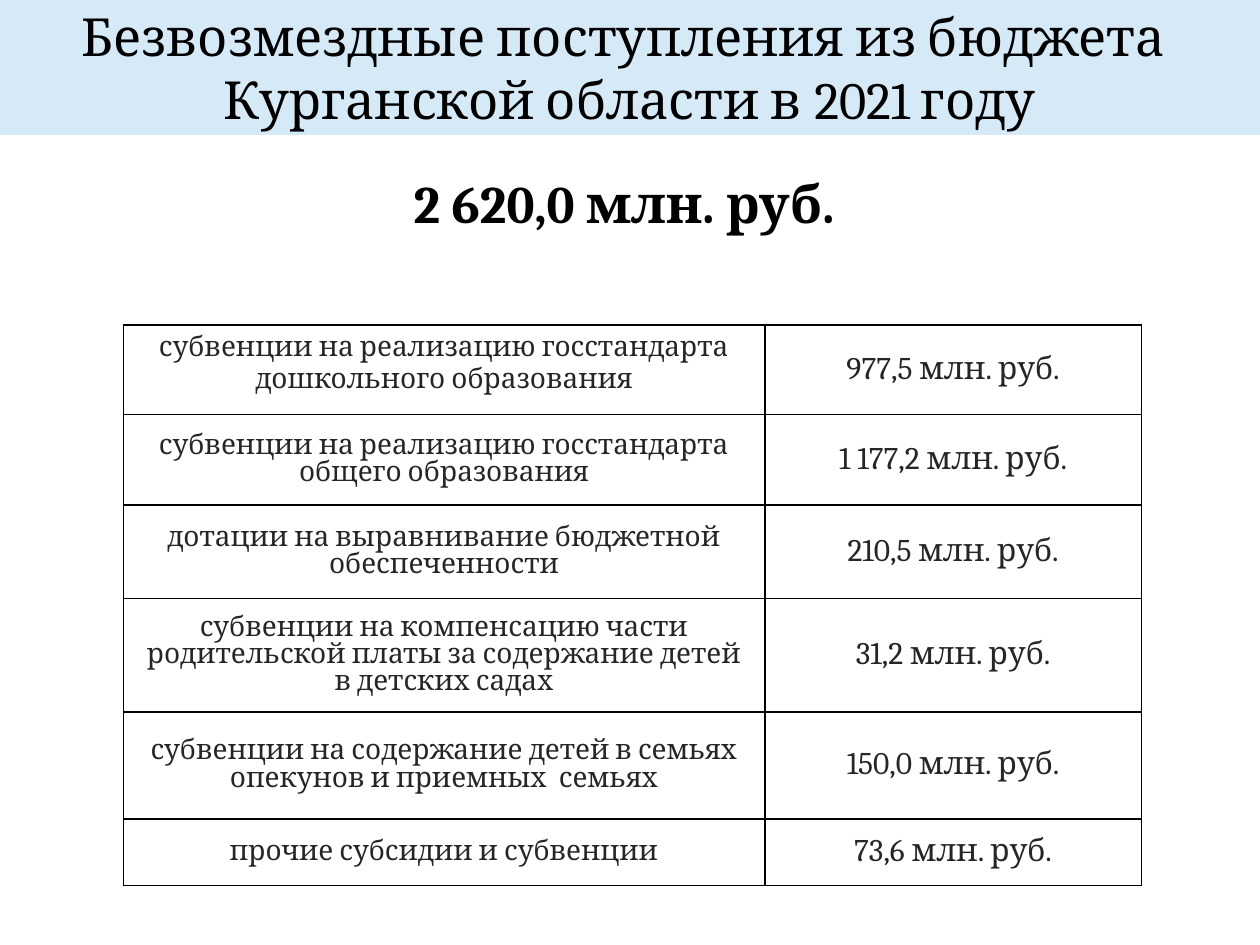
import pptx
import pptx.dml.color
import pptx.enum.text
import pptx.oxml
import pptx.oxml.ns
import pptx.util
from dataclasses import dataclass

Inches = pptx.util.Inches
ALIGN = pptx.enum.text.PP_ALIGN
ANCHOR = pptx.enum.text.MSO_ANCHOR


@dataclass(frozen=True)
class Theme:
    font: str = "Cambria"
    banner: str = "75B6E5"
    banner_alpha: int = 29
    black: str = "000000"
    body: str = "262626"
    heading_size: int = 30
    label_size: int = 16
    amount_size: int = 18
    border_width: int = 1


theme = Theme()


def format_text(text_frame, size, color, bold=False, spacing=1.0):
    for paragraph in text_frame.paragraphs:
        paragraph.alignment = ALIGN.CENTER
        paragraph.line_spacing = spacing
        paragraph.space_before = pptx.util.Pt(0)
        for run in paragraph.runs:
            run.font.name = theme.font
            run.font.size = pptx.util.Pt(size)
            run.font.bold = bold
            run.font.color.rgb = pptx.dml.color.RGBColor.from_string(color)


def add_borders(cell):
    properties = cell._tc.get_or_add_tcPr()
    for position, side in enumerate(("lnL", "lnR", "lnT", "lnB")):
        border = pptx.oxml.parse_xml(
            f'<a:{side} {pptx.oxml.ns.nsdecls("a")} w="{pptx.util.Pt(theme.border_width)}">'
            f'<a:solidFill><a:srgbClr val="{theme.black}"/></a:solidFill></a:{side}>'
        )
        properties.insert(position, border)


presentation = pptx.Presentation()
presentation.slide_width = Inches(10)
presentation.slide_height = Inches(7.5)
slide = presentation.slides.add_slide(presentation.slide_layouts[5])

# Title banner with a translucent fill
title = slide.shapes.title
title.left, title.top = Inches(0), Inches(0)
title.width, title.height = Inches(10), Inches(1.07)
title.fill.solid()
title.fill.fore_color.rgb = pptx.dml.color.RGBColor.from_string(theme.banner)
banner_color = title._element.spPr.find(".//" + pptx.oxml.ns.qn("a:srgbClr"))
banner_color.append(pptx.oxml.parse_xml(
    f'<a:alpha {pptx.oxml.ns.nsdecls("a")} val="{theme.banner_alpha * 1000}"/>'
))
title.text_frame.text = (
    "Безвозмездные поступления из бюджета \nКурганской области в 2021 году"
)
title.text_frame.vertical_anchor = ANCHOR.MIDDLE
title.text_frame.auto_size = pptx.enum.text.MSO_AUTO_SIZE.NONE
format_text(title.text_frame, theme.heading_size, theme.black)

# Table of receipts: label, amount, row height
receipts = [
    ("субвенции на реализацию госстандарта дошкольного образования", "977,5", 0.71),
    ("субвенции на реализацию госстандарта общего образования", "1 177,2", 0.72),
    ("дотации на выравнивание бюджетной обеспеченности", "210,5", 0.74),
    ("субвенции на компенсацию части родительской платы за содержание детей "
     "в детских садах", "31,2", 0.9),
    ("субвенции на содержание детей в семьях опекунов и приемных  семьях", "150,0", 0.85),
    ("прочие субсидии и субвенции", "73,6", 0.53),
]
table = slide.shapes.add_table(
    len(receipts), 2, Inches(0.98), Inches(2.58), Inches(8.08), Inches(4.45)
).table
table.first_row = False
table.horz_banding = False
table.columns[0].width = Inches(5.09)
table.columns[1].width = Inches(2.99)

for row, (label, amount, height) in enumerate(receipts):
    table.rows[row].height = Inches(height)
    contents = [(label, theme.label_size), (f"{amount} млн. руб.", theme.amount_size)]
    for column, (text, size) in enumerate(contents):
        cell = table.cell(row, column)
        cell.fill.background()
        add_borders(cell)
        cell.text_frame.text = text
        # The first label sits at the top with normal line spacing
        first_label = row == 0 and column == 0
        cell.vertical_anchor = ANCHOR.TOP if first_label else ANCHOR.MIDDLE
        format_text(cell.text_frame, size, theme.body, spacing=1.0 if first_label else 0.85)

# Total amount
total = slide.shapes.add_textbox(Inches(2.5), Inches(1.31), Inches(5), Inches(0.61))
total.text_frame.word_wrap = True
total.text_frame.auto_size = pptx.enum.text.MSO_AUTO_SIZE.SHAPE_TO_FIT_TEXT
total.text_frame.text = "2 620,0 млн. руб. "
format_text(total.text_frame, theme.heading_size, theme.black, bold=True)

presentation.save("out.pptx")
